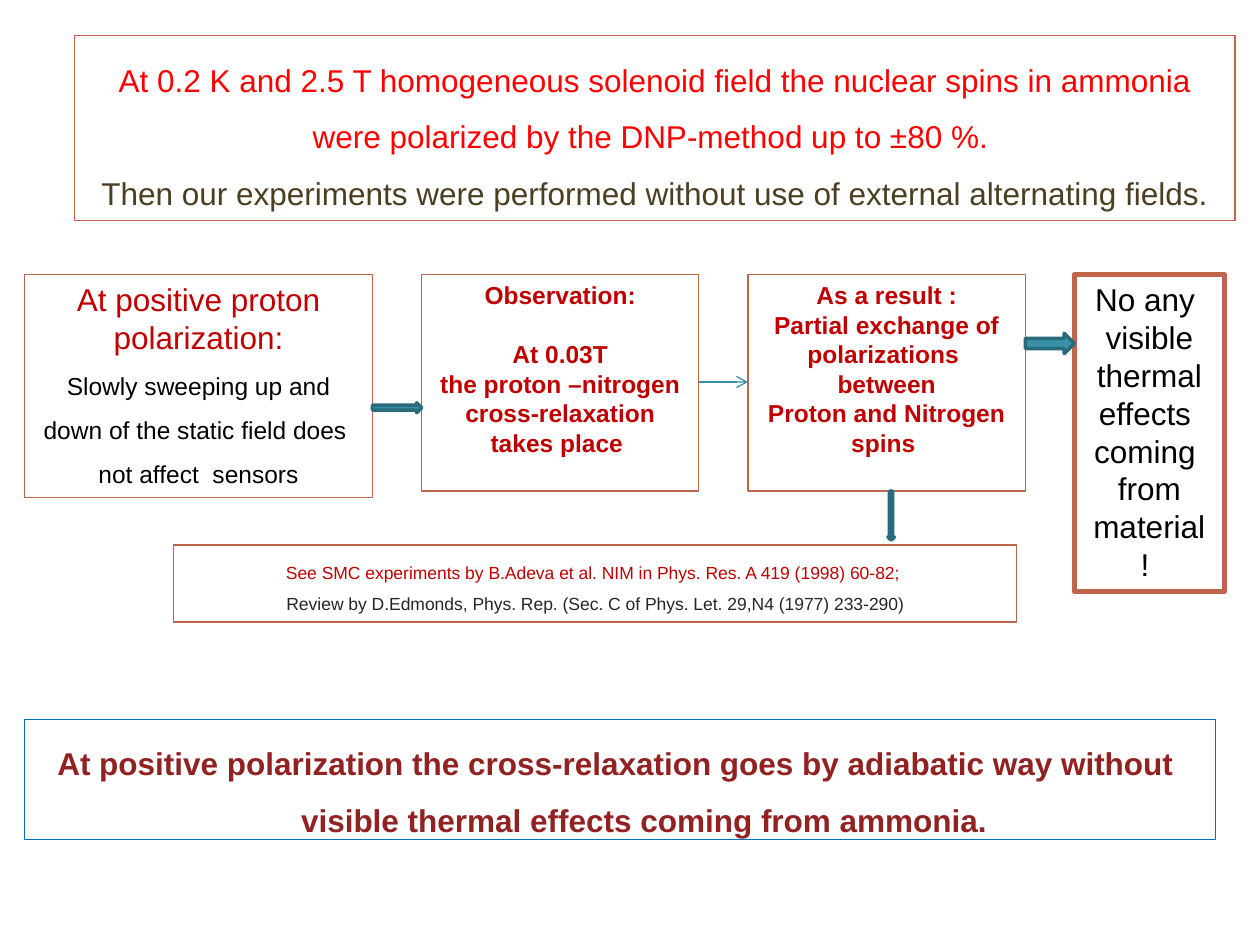
from collections import namedtuple
from dataclasses import dataclass

from lxml.etree import SubElement
from pptx import Presentation
from pptx.dml.color import RGBColor
from pptx.enum.shapes import MSO_CONNECTOR, MSO_SHAPE
from pptx.enum.text import MSO_ANCHOR, PP_ALIGN
from pptx.oxml.ns import qn
from pptx.util import Cm, Pt

Box = namedtuple("Box", "left top width height")


@dataclass(frozen=True)
class Theme:
    """Colours and type sizes of the slide."""
    font: str = "Arial"
    large: int = 18
    medium: int = 14
    small: int = 10
    frame: str = "C0654C"
    closing_frame: str = "0070C0"
    arrow_fill: str = "3891A7"
    arrow_edge: str = "296B7C"
    link: str = "348FA6"
    highlight: str = "FF0000"
    heading: str = "C00000"
    closing: str = "922222"
    olive: str = "4B3E21"
    charcoal: str = "262626"
    body: str = "000000"


@dataclass(frozen=True)
class Line:
    """One paragraph with its formatting."""
    text: str
    size: int
    color: str
    bold: bool = False
    spacing: float = 1.0
    before: float = 0
    hanging: float = 0


THEME = Theme()


def within(region, left, top, width, height):
    """Return a box offset from the corner of a region."""
    return Box(region.left + left, region.top + top, width, height)


def add_preset(slide, preset, box, edge, weight):
    """Add a shadowless preset shape with the given outline."""
    shape = slide.shapes.add_shape(preset, *map(Cm, box))
    shape.shadow.inherit = False
    shape.line.color.rgb = RGBColor.from_string(edge)
    shape.line.width = Pt(weight)
    return shape


def add_panel(slide, box, lines, edge=THEME.frame, weight=0.75):
    """Add an unfilled frame holding centred paragraphs."""
    panel = add_preset(slide, MSO_SHAPE.RECTANGLE, box, edge, weight)
    panel.fill.background()
    frame = panel.text_frame
    frame.word_wrap = True
    frame.vertical_anchor = MSO_ANCHOR.TOP
    frame.text = "\n".join(line.text for line in lines)
    for paragraph, line in zip(frame.paragraphs, lines):
        paragraph.alignment = PP_ALIGN.CENTER
        paragraph.line_spacing = line.spacing
        paragraph.space_before = Pt(line.before)
        if line.hanging:
            properties = paragraph._p.get_or_add_pPr()
            properties.set("marL", str(Cm(line.hanging)))
            properties.set("indent", str(-Cm(line.hanging)))
        for run in paragraph.runs:
            run.font.name = THEME.font
            run.font.size = Pt(line.size)
            run.font.bold = line.bold
            run.font.color.rgb = RGBColor.from_string(line.color)


def add_block_arrow(slide, preset, box):
    """Add a filled block arrow."""
    arrow = add_preset(slide, preset, box, THEME.arrow_edge, 2)
    arrow.fill.solid()
    arrow.fill.fore_color.rgb = RGBColor.from_string(THEME.arrow_fill)


def add_link(slide, box):
    """Add a thin connector with an open arrowhead across a box."""
    ends = (box.left, box.top, box.left + box.width, box.top + box.height)
    link = slide.shapes.add_connector(MSO_CONNECTOR.STRAIGHT, *map(Cm, ends))
    link.line.color.rgb = RGBColor.from_string(THEME.link)
    link.line.width = Pt(0.75)
    SubElement(link.line._get_or_add_ln(), qn("a:tailEnd"), type="arrow")
    SubElement(link._element.spPr, qn("a:effectLst"))


def add_conditions(slide, box):
    """Add the experimental conditions at the top."""
    add_panel(slide, box, [
        Line("At 0.2 K and 2.5 T homogeneous solenoid field the nuclear spins in "
             "ammonia were polarized by the DNP-method up to ±80 %. ",
             THEME.large, THEME.highlight, spacing=1.5),
        Line("Then our experiments were performed without use of external "
             "alternating fields.", THEME.large, THEME.olive, spacing=1.5),
    ])


def add_flow(slide, box):
    """Add the chain from polarization to outcome, with its references."""
    gap, step_width, step_height = 0.99, 5.59, 4.37
    start_width = 7.01
    observation_left = start_width + gap
    observation_right = observation_left + step_width
    result_left = observation_right + gap
    result_right = result_left + step_width
    outcome_left = result_right + gap
    references_top = step_height + 1.09

    def step_lines(texts, gap_after_first=0):
        """Format step texts, with an optional gap below the first."""
        return [Line(text, THEME.medium, THEME.heading, bold=True,
                     before=gap_after_first if index == 1 else 0)
                for index, text in enumerate(texts)]

    add_panel(slide, within(box, 0, 0, start_width, 4.5), [
        Line("At positive proton polarization:", THEME.large, THEME.heading),
        Line("Slowly sweeping up and down of the static field does  not affect  "
             "sensors", THEME.medium, THEME.body, spacing=1.5),
    ])
    add_panel(slide, within(box, observation_left, 0, step_width, step_height),
              step_lines(["Observation:", "At 0.03T",
                          "the proton –nitrogen cross-relaxation takes place "], 16.8))
    add_panel(slide, within(box, result_left, 0, step_width, step_height),
              step_lines(["As a result :",
                          "Partial exchange of polarizations  between",
                          "Proton and Nitrogen", "spins "]))
    add_panel(slide, within(box, 3, references_top, 16.99, 1.55), [
        Line("See SMC experiments by B.Adeva et al. NIM in Phys. Res. A 419 (1998) "
             "60-82; ", THEME.small, THEME.heading, spacing=1.5),
        Line("Review by D.Edmonds, Phys. Rep. (Sec. C of Phys. Let. 29,N4 (1977) "
             "233-290)", THEME.small, THEME.charcoal, spacing=1.5),
    ])
    outcome = ["No any ", "visible thermal effects ", "coming ", "from", "material", "! "]
    add_panel(slide, within(box, outcome_left, 0, box.width - outcome_left, box.height),
              [Line(text, THEME.large, THEME.body) for text in outcome], weight=3)

    add_block_arrow(slide, MSO_SHAPE.RIGHT_ARROW,
                    within(box, start_width, 2.59, gap, 0.2))
    add_link(slide, within(box, observation_right, 2.17, gap, 0))
    add_block_arrow(slide, MSO_SHAPE.DOWN_ARROW,
                    within(box, 17.4, step_height, 0.13, gap))
    add_block_arrow(slide, MSO_SHAPE.RIGHT_ARROW,
                    within(box, result_right, 1.19, gap, 0.41))


def add_conclusion(slide, box):
    """Add the closing statement."""
    add_panel(slide, box, [
        Line("At positive polarization the cross-relaxation goes by adiabatic way "
             "without  visible thermal effects coming from ammonia.",
             THEME.large, THEME.closing, bold=True, spacing=1.5, hanging=0.97),
    ], edge=THEME.closing_frame)


def main():
    """Build and save the slide."""
    presentation = Presentation()
    presentation.slide_width = Cm(25.4)
    presentation.slide_height = Cm(19.05)
    slide = presentation.slides.add_slide(presentation.slide_layouts[6])
    add_conditions(slide, Box(1.5, 0.72, 23.4, 3.72))
    add_flow(slide, Box(0.5, 5.53, 24.18, 6.4))
    add_conclusion(slide, Box(0.5, 14.5, 24, 2.42))
    presentation.save("out.pptx")


if __name__ == "__main__":
    main()
